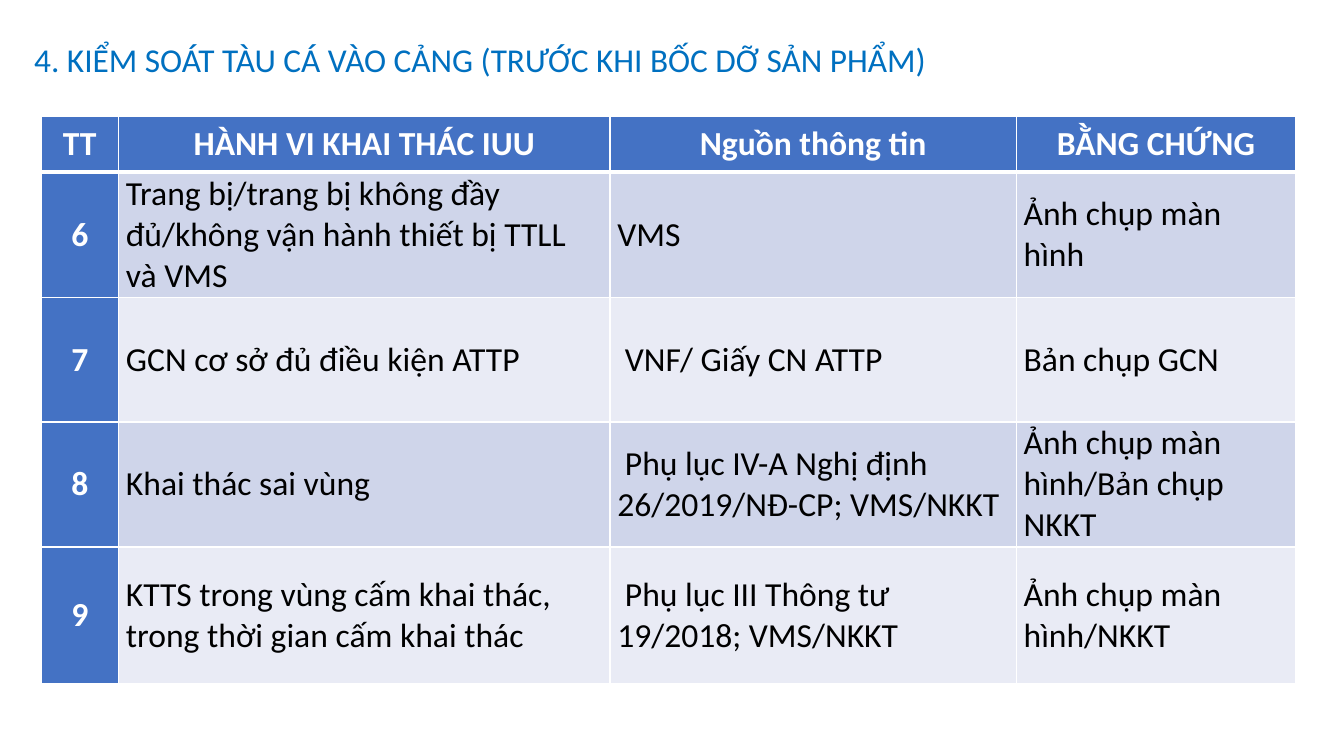
from lxml import etree
from pptx import Presentation
from pptx.dml.color import RGBColor
from pptx.enum.text import MSO_ANCHOR, PP_ALIGN
from pptx.oxml.ns import qn
from pptx.util import Pt

PX = 9525
TOP, MIDDLE = MSO_ANCHOR.TOP, MSO_ANCHOR.MIDDLE
LEFT, CENTER = PP_ALIGN.LEFT, PP_ALIGN.CENTER
FONT = "Calibri"
WHITE, BLACK, HEADING = "FFFFFF", "000000", "0070C0"
ACCENT, BANDS = "4472C4", ("CFD5EA", "E9EBF5")
COLUMN_WIDTHS = (74, 468, 387, 266)
ROW_HEIGHTS = (53, 119, 119, 119, 130)
VIOLATIONS = (
    ("TT", "HÀNH VI KHAI THÁC IUU", "Nguồn thông tin", "BẰNG CHỨNG"),
    ("6", "Trang bị/trang bị không đầy đủ/không vận hành thiết bị TTLL và VMS",
     "VMS", "Ảnh chụp màn hình"),
    ("7", "GCN cơ sở đủ điều kiện ATTP", " VNF/ Giấy CN ATTP ", "Bản chụp GCN"),
    ("8", "Khai thác sai vùng", " Phụ lục IV-A Nghị định 26/2019/NĐ-CP; VMS/NKKT",
     "Ảnh chụp màn hình/Bản chụp NKKT"),
    ("9", "KTTS trong vùng cấm khai thác, trong thời gian cấm khai thác",
     " Phụ lục III Thông tư 19/2018; VMS/NKKT", "Ảnh chụp màn hình/NKKT"),
)


def px(length):
    """Turn pixels into EMU."""
    return length * PX


def rgb(value):
    """Turn a hex string into a colour."""
    return RGBColor.from_string(value)


def format_paragraph(paragraph, size, color, bold, align, before):
    """Set the font, alignment and space before of a paragraph."""
    paragraph.alignment = align
    paragraph.space_before = Pt(before)
    font = paragraph.font
    font.name, font.size, font.bold = FONT, Pt(size), bold
    font.color.rgb = rgb(color)


def add_heading(slide, wording):
    """Place the slide heading in the title placeholder."""
    heading = slide.shapes.title
    heading.left, heading.top, heading.width, heading.height = map(px, (23, 40, 890, 63))
    frame = heading.text_frame
    frame.text = wording
    frame.word_wrap = True
    frame.vertical_anchor = TOP
    paragraph = frame.paragraphs[0]
    paragraph.line_spacing = 0.8
    format_paragraph(paragraph, 23.8, HEADING, False, LEFT, 10)


def add_borders(cell, row):
    """Draw white cell borders, thicker below the header row."""
    widths = {"a:lnL": 1, "a:lnR": 1, "a:lnT": 3 if row == 1 else 1,
              "a:lnB": 3 if row == 0 else 1}
    properties = cell._tc.get_or_add_tcPr()
    for side, width in widths.items():
        line = etree.SubElement(properties, qn(side), w=str(Pt(width)))
        fill = etree.SubElement(line, qn("a:solidFill"))
        etree.SubElement(fill, qn("a:srgbClr"), val=WHITE)


def fill_cell(cell, wording, row, column):
    """Write and format one table cell by its place."""
    is_header, is_label = row == 0, row == 0 or column == 0
    cell.text = wording
    cell.vertical_anchor = MIDDLE
    cell.margin_left = cell.margin_right = px(6 if is_header else 7)
    cell.margin_top = cell.margin_bottom = 0
    add_borders(cell, row)
    cell.fill.solid()
    cell.fill.fore_color.rgb = rgb(ACCENT if is_label else BANDS[(row - 1) % 2])
    format_paragraph(cell.text_frame.paragraphs[0], 24, WHITE if is_label else BLACK,
                     is_label, CENTER if is_label else LEFT, 6)


def add_violations(slide):
    """Add the table of violations, sources and evidence."""
    size = sum(COLUMN_WIDTHS), sum(ROW_HEIGHTS)
    table = slide.shapes.add_table(len(ROW_HEIGHTS), len(COLUMN_WIDTHS),
                                   *map(px, (39, 111, *size))).table
    table.first_col = True
    for column, width in zip(table.columns, COLUMN_WIDTHS):
        column.width = px(width)
    for row, height in zip(table.rows, ROW_HEIGHTS):
        row.height = px(height)
    for row, entries in enumerate(VIOLATIONS):
        for column, wording in enumerate(entries):
            fill_cell(table.cell(row, column), wording, row, column)


def main():
    """Build and save the slide."""
    presentation = Presentation()
    presentation.slide_width, presentation.slide_height = px(1280), px(720)
    slide = presentation.slides.add_slide(presentation.slide_layouts[5])
    add_heading(slide, "4. KIỂM SOÁT TÀU CÁ VÀO CẢNG (TRƯỚC KHI BỐC DỠ SẢN PHẨM)")
    add_violations(slide)
    presentation.save("out.pptx")


if __name__ == "__main__":
    main()
